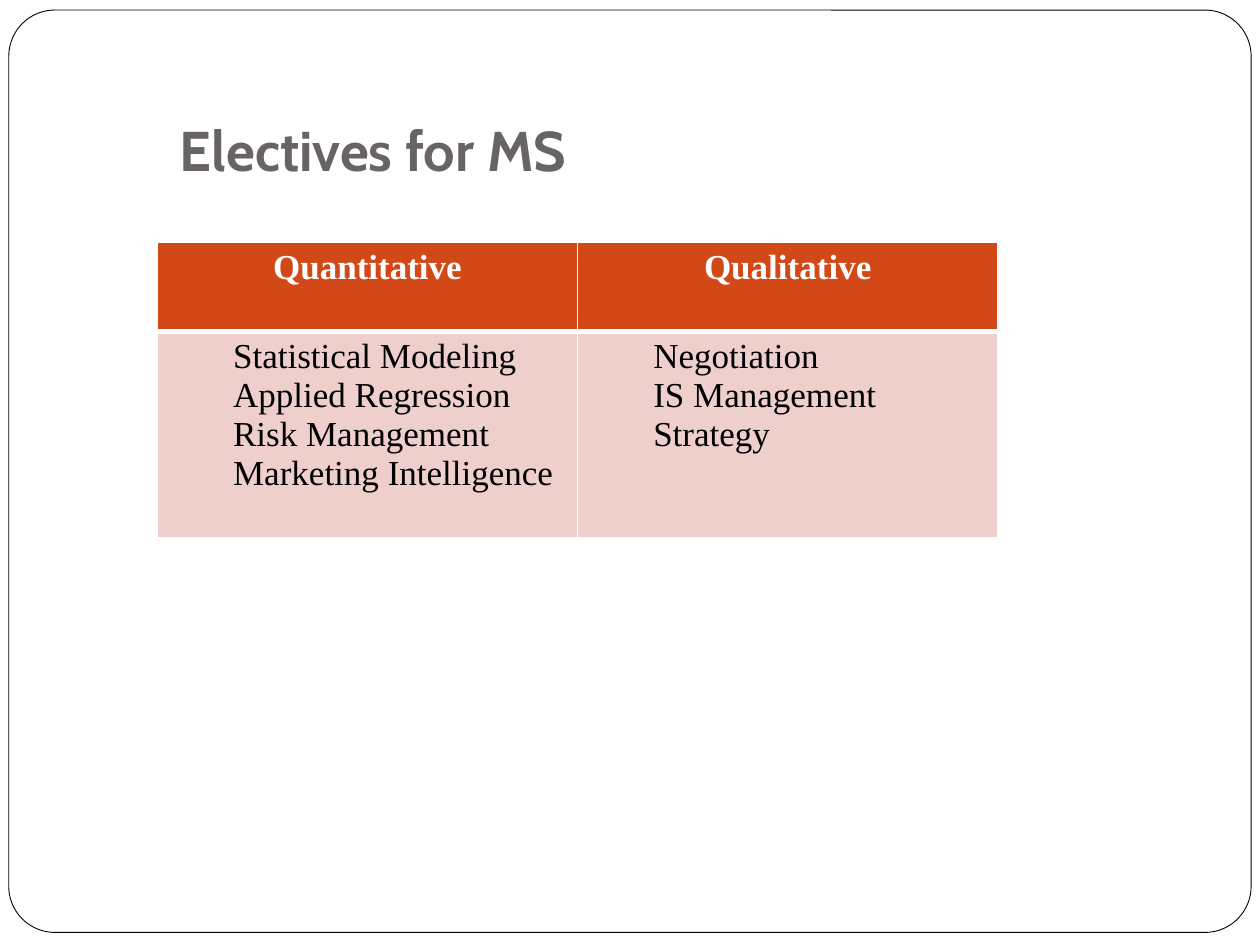
from lxml import etree
from pptx import Presentation
from pptx.dml.color import RGBColor
from pptx.enum.shapes import MSO_SHAPE
from pptx.enum.text import MSO_ANCHOR, PP_ALIGN
from pptx.oxml.ns import qn
from pptx.util import Inches, Pt

ROUND = MSO_SHAPE.ROUNDED_RECTANGLE
BOTTOM = MSO_ANCHOR.BOTTOM
CENTER, LEFT = PP_ALIGN.CENTER, PP_ALIGN.LEFT

COLORS = {"white": "FFFFFF", "black": "000000", "title": "696464",
          "head": "D34817", "body": "EFCFCC"}
TITLE = {"name": "Cabin", "size": Pt(32), "bold": True}
HEAD = {"name": "Times New Roman", "size": Pt(20), "bold": True}
BODY = {**HEAD, "bold": False}
ELECTIVES = {
    "Quantitative": ["Statistical Modeling", "Applied Regression",
                     "Risk Management", "Marketing Intelligence"],
    "Qualitative": ["Negotiation", "IS Management", "Strategy"],
}


def color(name):
    return RGBColor.from_string(COLORS[name])


def write(para, text, style, ink, align=LEFT):
    para.alignment = align
    run = para.add_run()
    run.text = text
    for key, value in style.items():
        setattr(run.font, key, value)
    run.font.color.rgb = color(ink)


def add_frame(slide, box):
    frame = slide.shapes.add_shape(ROUND, *map(Inches, box))
    frame.shadow.inherit = False
    frame.adjustments[0] = 0.05
    frame.fill.solid()
    frame.fill.fore_color.rgb = color("white")
    frame.line.color.rgb = color("black")
    frame.line.width = Pt(0.5)


def add_title(slide, box, text):
    frame = slide.shapes.add_textbox(*map(Inches, box)).text_frame
    frame.word_wrap = True
    frame.vertical_anchor = BOTTOM
    frame.margin_bottom = Inches(0.1)
    write(frame.paragraphs[0], text, TITLE, "title")


def edge(cell, widths):
    """Draw white borders; widths maps a side (L, R, T, B) to points."""
    props = cell._tc.get_or_add_tcPr()
    for side, width in widths.items():
        line = etree.SubElement(props, qn(f"a:ln{side}"), w=str(Pt(width)))
        fill = etree.SubElement(line, qn("a:solidFill"))
        etree.SubElement(fill, qn("a:srgbClr"), val=COLORS["white"])


def fill_cell(cell, lines, style, ink, back, align=LEFT, indent=0, top=1, bottom=1):
    edge(cell, {"L": 1, "R": 1, "T": top, "B": bottom})
    cell.fill.solid()
    cell.fill.fore_color.rgb = color(back)
    frame = cell.text_frame
    for i, text in enumerate(lines):
        para = frame.add_paragraph() if i else frame.paragraphs[0]
        write(para, text, style, ink, align)
        if indent:
            para.level = 1
            props = para._p.get_or_add_pPr()
            props.set("marL", str(Inches(indent)))
            props.set("indent", "0")


def add_electives(slide, box, heights):
    table = slide.shapes.add_table(2, len(ELECTIVES), *map(Inches, box)).table
    for row, height in zip(table.rows, heights):
        row.height = Inches(height)
    for col, (head, names) in enumerate(ELECTIVES.items()):
        fill_cell(table.cell(0, col), [head], HEAD, "white", "head",
                  align=CENTER, bottom=3)
        fill_cell(table.cell(1, col), names, BODY, "black", "body",
                  indent=0.5, top=3)


def main():
    deck = Presentation()
    deck.slide_width, deck.slide_height = Inches(10), Inches(7.5)
    slide = deck.slides.add_slide(deck.slide_layouts[6])
    add_frame(slide, (0.07, 0.08, 9.86, 7.32))
    add_title(slide, (1.33, 0.3, 8.17, 1.25), "Electives for MS")
    add_electives(slide, (1.25, 1.92, 6.67, 2.35), (0.71, 1.64))
    deck.save("out.pptx")


if __name__ == "__main__":
    main()
